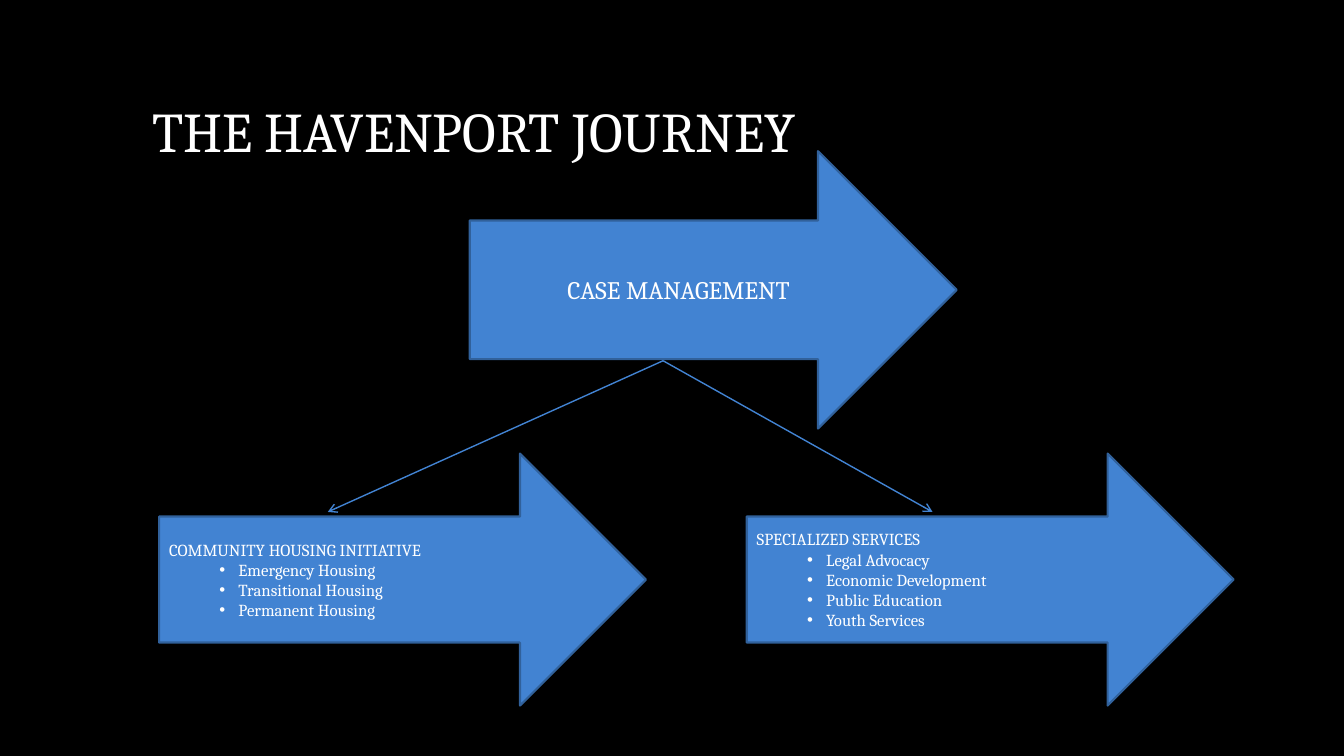
from lxml.etree import SubElement
from pptx import Presentation
from pptx.dml.color import RGBColor
from pptx.enum.shapes import MSO_CONNECTOR, MSO_SHAPE
from pptx.enum.text import MSO_ANCHOR, MSO_AUTO_SIZE, PP_ALIGN
from pptx.oxml.ns import qn
from pptx.util import Cm, Pt

FONT = "Cambria"
BLACK, WHITE, BLUE, DARK_BLUE = "000000", "FFFFFF", "4283D2", "31619B"
ARROW_WIDTH = 12.27
SERVICE_TOP, SERVICE_HEIGHT = 11.43, 6.35
FORK = (16.71, 9.09)
SERVICES = [
    (4.01, (8.26, 12.9), "COMMUNITY HOUSING INITIATIVE",
     ["Emergency Housing", "Transitional Housing", "Permanent Housing"]),
    (18.82, (23.5, 12.9), "SPECIALIZED SERVICES",
     ["Legal Advocacy", "Economic Development", "Public Education", "Youth Services"]),
]


def set_color(color_format, value):
    """Apply a hex colour to a fill or line or font colour."""
    color_format.rgb = RGBColor.from_string(value)


def add_run(paragraph, text, size):
    """Add a white run in the slide font."""
    run = paragraph.add_run()
    run.text = text
    run.font.name = FONT
    run.font.size = Pt(size)
    set_color(run.font.color, WHITE)


def set_bullet(paragraph):
    """Make a paragraph a second-level item with a hanging bullet."""
    paragraph.level = 1
    properties = paragraph._p.get_or_add_pPr()
    properties.set("marL", str(Cm(1.75)))
    properties.set("indent", str(-Cm(0.48)))
    SubElement(properties, qn("a:buFont")).set("typeface", "Arial")
    SubElement(properties, qn("a:buChar")).set("char", "•")


def add_title(slide, text):
    """Place and format the title placeholder."""
    title = slide.shapes.title
    title.left, title.top, title.width, title.height = Cm(3.58), Cm(1.07), Cm(26.67), Cm(3.18)
    frame = title.text_frame
    frame.auto_size = MSO_AUTO_SIZE.NONE
    frame.vertical_anchor = MSO_ANCHOR.BOTTOM
    paragraph = frame.paragraphs[0]
    paragraph.alignment = PP_ALIGN.LEFT
    paragraph.line_spacing = 0.8
    add_run(paragraph, text, 40)


def add_block_arrow(slide, left, top, height, heading, size, alignment, items=()):
    """Add a right arrow holding a heading and optional bullets."""
    shape = slide.shapes.add_shape(
        MSO_SHAPE.RIGHT_ARROW, Cm(left), Cm(top), Cm(ARROW_WIDTH), Cm(height))
    shape.shadow.inherit = False
    shape.fill.solid()
    set_color(shape.fill.fore_color, BLUE)
    set_color(shape.line.color, DARK_BLUE)
    shape.line.width = Pt(1.5)
    frame = shape.text_frame
    frame.word_wrap = True
    frame.vertical_anchor = MSO_ANCHOR.MIDDLE
    paragraph = frame.paragraphs[0]
    paragraph.alignment = alignment
    add_run(paragraph, heading, size)
    for item in items:
        paragraph = frame.add_paragraph()
        paragraph.alignment = alignment
        set_bullet(paragraph)
        add_run(paragraph, item, size)


def add_branch(slide, start, end):
    """Add a thin line with an open arrowhead at its end."""
    connector = slide.shapes.add_connector(
        MSO_CONNECTOR.STRAIGHT, *(Cm(value) for value in (*start, *end)))
    set_color(connector.line.color, BLUE)
    connector.line.width = Pt(1)
    SubElement(connector.line._get_or_add_ln(), qn("a:tailEnd")).set("type", "arrow")
    SubElement(connector._element.spPr, qn("a:effectLst"))


def main():
    """Build and save the slide."""
    presentation = Presentation()
    presentation.slide_width, presentation.slide_height = Cm(33.87), Cm(19.05)
    slide = presentation.slides.add_slide(presentation.slide_layouts[5])
    slide.background.fill.solid()
    set_color(slide.background.fill.fore_color, BLACK)
    add_title(slide, "THE HAVENPORT JOURNEY")
    add_block_arrow(slide, 11.84, 3.81, 6.99, "CASE MANAGEMENT", 18, PP_ALIGN.CENTER)
    for left, _, heading, items in SERVICES:
        add_block_arrow(slide, left, SERVICE_TOP, SERVICE_HEIGHT,
                        heading, 12, PP_ALIGN.LEFT, items)
    for _, branch_end, _, _ in SERVICES:
        add_branch(slide, FORK, branch_end)
    presentation.save("out.pptx")


if __name__ == "__main__":
    main()
